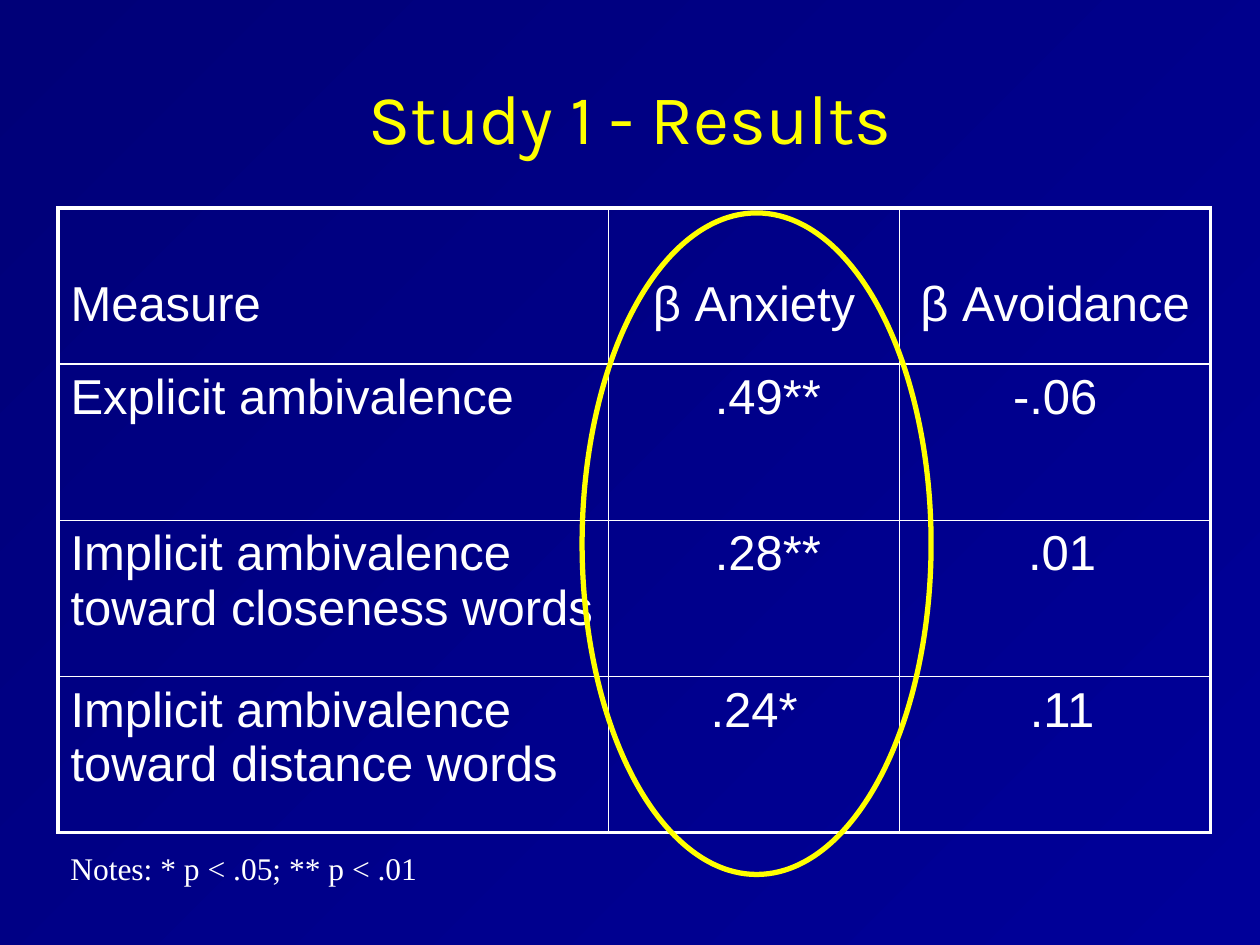
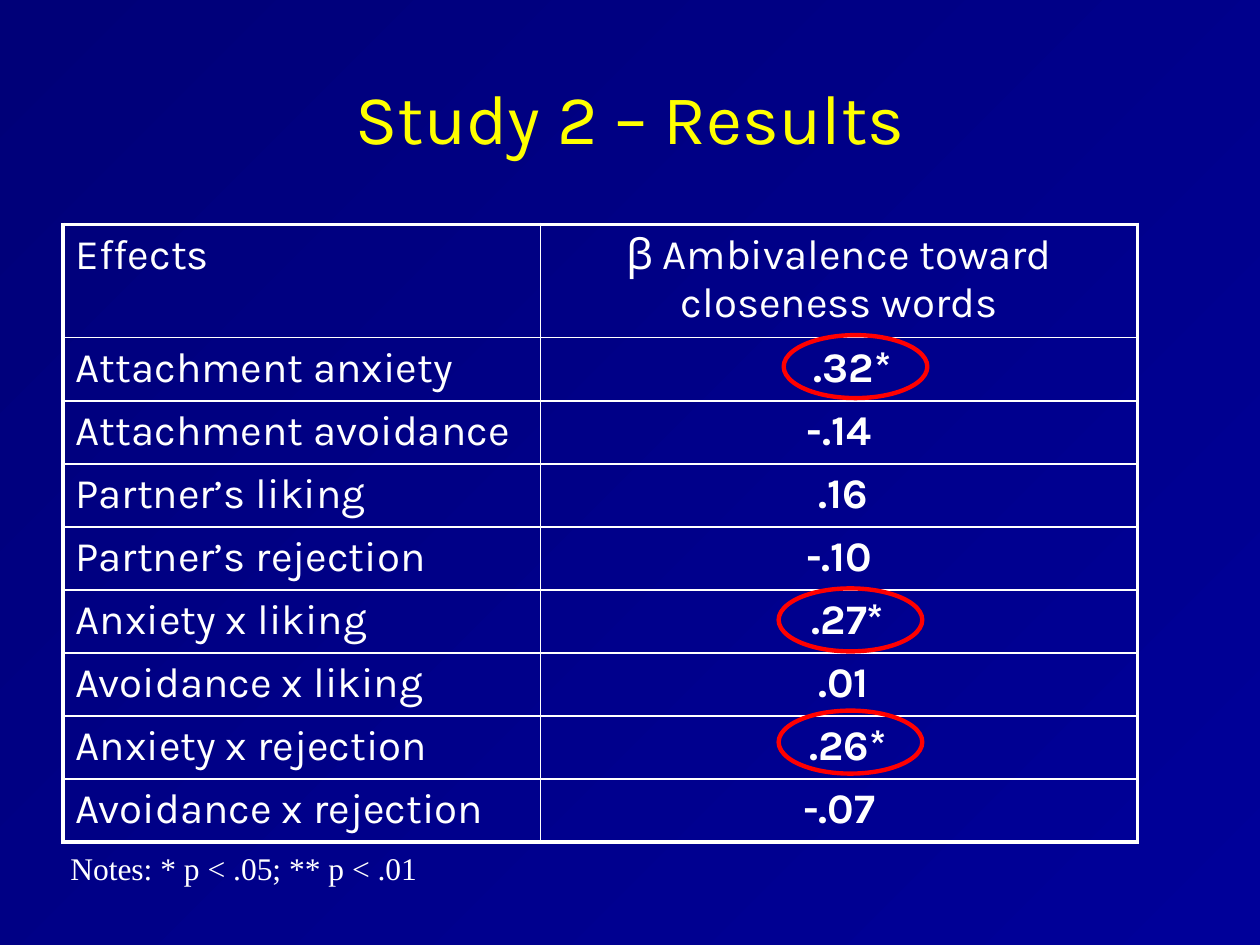
import pptx
import pptx.util
import pptx.dml.color
import pptx.enum.shapes
import pptx.enum.text
import pptx.oxml
import pptx.oxml.ns

# Shared style: the grid has half-inch columns and rows
COLS, ROWS = 20, 15
HUES = {"dark": "000078", "deep": "000099", "text": "FFFFFF",
        "title": "FFFF00", "mark": "FF0000"}
THIN, THICK = 1, 2.25
PAD = 0.1
NOTES = "Notes: * p < .05; ** p < .01"


def hue(name):
    return pptx.dml.color.RGBColor.from_string(HUES[name])


def write(frame, text, font="Karla", size=24, color="text", bold=False,
          center=False):
    """Put one formatted paragraph into a text frame."""
    frame.word_wrap = True
    para = frame.paragraphs[0]
    align = pptx.enum.text.PP_ALIGN
    para.alignment = align.CENTER if center else align.LEFT
    run = para.add_run()
    run.text = text
    run.font.name = font
    run.font.size = pptx.util.Pt(size)
    run.font.bold = bold
    run.font.color.rgb = hue(color)


def edge(cell, sides):
    """Draw cell borders; sides maps L, R, T, B to widths in points."""
    props = cell._tc.get_or_add_tcPr()
    for place, side in enumerate("LRTB"):
        width = pptx.util.Pt(sides[side])
        line = pptx.oxml.parse_xml(
            f'<a:ln{side} {pptx.oxml.ns.nsdecls("a")} w="{width}">'
            f'<a:solidFill><a:srgbClr val="{HUES["text"]}"/></a:solidFill>'
            f'</a:ln{side}>')
        props.insert(place, line)


class Deck:
    def __init__(self):
        self.prs = pptx.Presentation()
        self.prs.slide_width = pptx.util.Inches(10)
        self.prs.slide_height = pptx.util.Inches(7.5)
        self.slide = None

    def wide(self, cols):
        return round(self.prs.slide_width * cols / COLS)

    def high(self, rows):
        return round(self.prs.slide_height * rows / ROWS)

    def area(self, left, top, width, height):
        return (self.wide(left), self.high(top),
                self.wide(width), self.high(height))

    def start(self, title):
        """Add a slide with its backdrop, title and notes line."""
        self.slide = self.prs.slides.add_slide(self.prs.slide_layouts[6])
        fill = self.slide.background.fill
        fill.gradient()
        fill.gradient_angle = 315
        for stop, name, spot in zip(fill.gradient_stops,
                                    ("dark", "deep"), (0, 1)):
            stop.color.rgb = hue(name)
            stop.position = spot
        self.label(title, (1, 0.6, 18, 2.5), size=40, color="title",
                   center=True)
        self.label(NOTES, (0.92, 13.38, 6.38, 0.8), size=18,
                   font="Times New Roman", middle=False)

    def label(self, text, box, middle=True, **style):
        frame = self.slide.shapes.add_textbox(*self.area(*box)).text_frame
        anchor = pptx.enum.text.MSO_ANCHOR
        frame.vertical_anchor = anchor.MIDDLE if middle else anchor.TOP
        write(frame, text, **style)

    def table(self, data, spot, widths, heights, drop=0, nudge=0,
              strong=False, **style):
        """Draw a table. A (text, n) cell is shifted right by n nudges;
        drop lowers the header text; strong sets the values in bold."""
        box = self.area(*spot, sum(widths), sum(heights))
        grid = self.slide.shapes.add_table(
            len(heights), len(widths), *box).table
        grid.first_row = grid.horz_banding = False
        for col, width in zip(grid.columns, widths):
            col.width = self.wide(width)
        for row, height in zip(grid.rows, heights):
            row.height = self.high(height)
        last, end = len(heights) - 1, len(widths) - 1
        for r, line in enumerate(data):
            for c, item in enumerate(line):
                text, shift = item if isinstance(item, tuple) else (item, 0)
                cell = grid.cell(r, c)
                cell.fill.background()
                cell.margin_left = pptx.util.Inches(PAD + shift * nudge)
                cell.margin_right = pptx.util.Inches(PAD)
                cell.margin_top = pptx.util.Inches(
                    PAD / 2 + (0 if r else drop))
                cell.margin_bottom = pptx.util.Inches(PAD / 2)
                write(cell.text_frame, text, center=c > 0,
                      bold=strong and r > 0 and c > 0, **style)
                outer = {"L": c == 0, "R": c == end,
                         "T": r == 0, "B": r == last}
                edge(cell, {side: THICK if out else THIN
                            for side, out in outer.items()})

    def ring(self, box, color, width):
        oval = self.slide.shapes.add_shape(
            pptx.enum.shapes.MSO_SHAPE.OVAL, *self.area(*box))
        oval.shadow.inherit = False
        oval.fill.background()
        oval.line.color.rgb = hue(color)
        oval.line.width = pptx.util.Pt(width)


def main():
    deck = Deck()

    # Study 1: three measures, anxiety column circled
    deck.start("Study 1 - Results")
    deck.table(
        [("Measure", "β Anxiety", "β Avoidance"),
         ("Explicit ambivalence", (".49**", 2), "-.06"),
         ("Implicit ambivalence toward closeness words",
          (".28**", 2), (".01", 1)),
         ("Implicit ambivalence toward distance words",
          ".24*", (".11", 1))],
        (0.92, 3.3), (8.74, 4.62, 4.94), [2.48] * 4,
        drop=0.5, nudge=0.11, font="Arial", size=28)
    deck.ring((9.24, 3.38, 5.54, 10.5), "title", 3)

    # Study 2: eight effects, significant ones circled
    deck.start("Study 2 – Results")
    deck.table(
        [("Effects", "β Ambivalence toward closeness words"),
         ("Attachment anxiety", (".32*", 3)),
         ("Attachment avoidance", "-.14"),
         ("Partner’s liking", (".16", 1)),
         ("Partner’s rejection", "-.10"),
         ("Anxiety x liking", (".27*", 2)),
         ("Avoidance x liking", (".01", 1)),
         ("Anxiety x rejection", (".26*", 2)),
         ("Avoidance x rejection", "-.07")],
        (1, 3.56), (7.58, 9.48), [1.8] + [1] * 8,
        nudge=0.07, strong=True)
    for left, top in ((12.44, 5.32), (12.36, 9.34), (12.36, 11.28)):
        deck.ring((left, top, 2.28, 1), "mark", 2.5)

    deck.prs.save("out.pptx")


if __name__ == "__main__":
    main()
